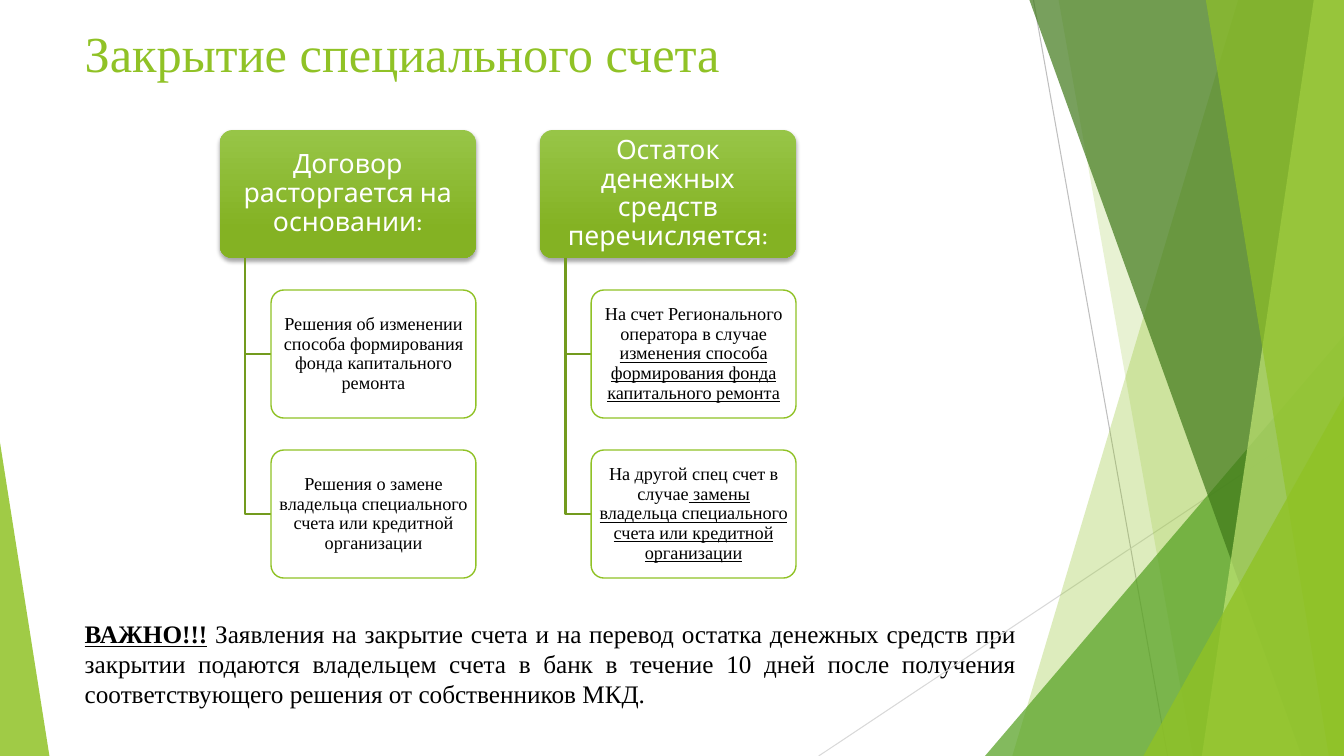
from lxml import etree
from pptx import Presentation
from pptx.dml.color import RGBColor
from pptx.enum.shapes import MSO_CONNECTOR, MSO_SHAPE
from pptx.enum.text import MSO_ANCHOR, MSO_AUTO_SIZE, PP_ALIGN
from pptx.oxml.ns import qn
from pptx.util import Inches, Pt

TITLE = "Закрытие специального счета"
BRANCHES = [
    ("Договор расторгается на основании:", [
        ("Решения об изменении способа формирования фонда капитального ремонта", ""),
        ("Решения о замене владельца специального счета или кредитной организации", ""),
    ]),
    ("Остаток денежных средств перечисляется:", [
        ("На счет Регионального оператора в случае ",
         "изменения способа формирования фонда капитального ремонта"),
        ("На другой спец счет в случае",
         " замены владельца специального счета или кредитной организации"),
    ]),
]
WARNING = "ВАЖНО!!!"
NOTE = (" Заявления на закрытие счета и на перевод остатка денежных средств при закрытии "
        "подаются владельцем счета в банк в течение 10 дней после получения "
        "соответствующего решения от собственников МКД.")

COLORS = {
    "green": "90C226", "leaf": "54A021", "dark": "3F7819", "pale": "C0E474",
    "stem": "739B1E", "top": "97C547", "bottom": "84B223",
    "white": "FFFFFF", "black": "000000", "gray": "BFBFBF", "light": "D9D9D9",
}
SERIF, SANS = "Times New Roman", "Karla"
WIDTH, HEIGHT = 13.33, 7.5

RAYS = [("gray", (10.25, 0), (11.58, HEIGHT)), ("light", (WIDTH, 4.03), (8.12, HEIGHT))]
FACETS = [
    ("band", 12.28, 10.04, "green", 30),
    ("band", 10.5, 11.83, "green", 20),
    ("triangle", 9.77, 3.33, "leaf", 72),
    ("band", 10.21, 12.91, "dark", 70),
    ("band", 13.03, 11.92, "pale", 70),
    ("band", 11.96, 13.18, "green", 65),
    ("triangle", 11.34, 3.93, "green", 80),
]

LEFT, TOP = 2.18, 1.29
HEAD_W, BOX_H = 2.54, 1.27
COLUMN_STEP, ROW_STEP = HEAD_W * 1.25, BOX_H * 1.25
STEM_X, LEAF_X = HEAD_W * 0.1, HEAD_W * 0.2
LEAF_W = HEAD_W - LEAF_X


def rgb(name):
    return RGBColor.from_string(COLORS[name])


def paint(shape, color, opacity):
    shape.shadow.inherit = False
    shape.line.fill.background()
    shape.fill.solid()
    shape.fill.fore_color.rgb = rgb(color)
    tint = shape.fill._xPr.find(qn("a:solidFill"))[0]
    etree.SubElement(tint, qn("a:alpha"), val=str(opacity * 1000))


def outline(points, close):
    corners = [(Inches(x), Inches(y)) for x, y in points]
    builder = slide.shapes.build_freeform(*corners[0])
    builder.add_line_segments(corners[1:], close=close)
    shape = builder.convert_to_shape()
    shape.shadow.inherit = False
    return shape


def add_triangle(x, y, width, apex, color, opacity):
    triangle = slide.shapes.add_shape(
        MSO_SHAPE.ISOSCELES_TRIANGLE, Inches(x), Inches(y), Inches(width), Inches(HEIGHT - y))
    triangle.adjustments[0] = apex
    paint(triangle, color, opacity)


def add_box(x, y, width, pieces, font, size, color, margin):
    box = slide.shapes.add_shape(
        MSO_SHAPE.ROUNDED_RECTANGLE, Inches(x), Inches(y), Inches(width), Inches(BOX_H))
    box.adjustments[0] = 0.1
    box.shadow.inherit = False
    frame = box.text_frame
    frame.word_wrap = True
    frame.vertical_anchor = MSO_ANCHOR.MIDDLE
    frame.margin_left = frame.margin_right = Inches(margin)
    frame.margin_top = frame.margin_bottom = Inches(margin - 0.01)
    paragraph = frame.paragraphs[0]
    paragraph.alignment = PP_ALIGN.CENTER
    paragraph.line_spacing = 0.9
    style(paragraph, font, size, color)
    for piece, underlined in pieces:
        if piece:
            run = paragraph.add_run()
            run.text = piece
            if underlined:
                run.font.underline = True
    return box


def style(paragraph, font, size, color):
    paragraph.font.name = font
    paragraph.font.size = Pt(size)
    paragraph.font.color.rgb = rgb(color)


def add_head(x, text):
    head = add_box(x, TOP, HEAD_W, [(text, False)], SANS, 19, "white", 0.04)
    head.line.fill.background()
    head.fill.gradient()
    head.fill.gradient_angle = 270
    for stop, position, color in zip(head.fill.gradient_stops, (0, 0.78), ("top", "bottom")):
        stop.position = position
        stop.color.rgb = rgb(color)
    effects = head._element.spPr.find(qn("a:effectLst"))
    shade = etree.SubElement(effects, qn("a:outerShdw"), blurRad=str(Pt(3)),
                             dist=str(Pt(2)), dir="5400000", rotWithShape="0")
    tint = etree.SubElement(shade, qn("a:srgbClr"), val=COLORS["black"])
    etree.SubElement(tint, qn("a:alpha"), val="35000")


def add_leaf(x, row, plain, underlined):
    y = TOP + row * ROW_STEP
    middle = y + BOX_H / 2
    stem = outline([(x + STEM_X, TOP + BOX_H), (x + STEM_X, middle), (x + LEAF_X, middle)], False)
    stem.fill.background()
    stem.line.color.rgb = rgb("stem")
    stem.line.width = Pt(1.5)
    leaf = add_box(x + LEAF_X, y, LEAF_W, [(plain, False), (underlined, True)],
                   SERIF, 13, "black", 0.03)
    paint(leaf, "white", 90)
    leaf.line.color.rgb = rgb("green")
    leaf.line.width = Pt(1)


def place(holder, x, y, width, height):
    holder.left, holder.top = Inches(x), Inches(y)
    holder.width, holder.height = Inches(width), Inches(height)
    holder.text_frame.word_wrap = True
    holder.text_frame.auto_size = MSO_AUTO_SIZE.NONE
    holder.text_frame.vertical_anchor = MSO_ANCHOR.TOP
    return holder.text_frame.paragraphs[0]


deck = Presentation()
deck.slide_width, deck.slide_height = Inches(WIDTH), Inches(HEIGHT)
slide = deck.slides.add_slide(deck.slide_layouts[1])

for color, start, end in RAYS:
    ray = slide.shapes.add_connector(
        MSO_CONNECTOR.STRAIGHT, *[Inches(value) for value in start + end])
    ray.line.color.rgb = rgb(color)
    ray.line.width = Pt(0.75)
    etree.SubElement(ray._element.spPr, qn("a:effectLst"))

for kind, first, second, color, opacity in FACETS:
    if kind == "band":
        band = outline([(first, 0), (WIDTH, 0), (WIDTH, HEIGHT), (second, HEIGHT)], True)
        paint(band, color, opacity)
    else:
        add_triangle(first, second, WIDTH - first, 1, color, opacity)
add_triangle(0, 4.39, 0.49, 0, "green", 85)

heading = place(slide.shapes.title, 0.74, 0.17, 9.4, 1.44)
heading.text = TITLE
heading.alignment = PP_ALIGN.LEFT
style(heading, SERIF, 36, "green")

note = place(slide.placeholders[1], 0.74, 6.09, 9.44, 1.03)
note.alignment = PP_ALIGN.JUSTIFY
note.space_before = Pt(0)
note.line_spacing = Pt(21.4)
style(note, SERIF, 18, "black")
note_format = note._p.get_or_add_pPr()
note_format.set("marL", "0")
note_format.set("indent", "0")
note_format.insert_element_before(
    etree.SubElement(note_format, qn("a:buNone")), "a:tabLst", "a:defRPr", "a:extLst")
warning = note.add_run()
warning.text = WARNING
warning.font.bold = warning.font.underline = True
note.add_run().text = NOTE

for column, (head_text, leaves) in enumerate(BRANCHES):
    branch_x = LEFT + column * COLUMN_STEP
    add_head(branch_x, head_text)
    for row, (plain, underlined) in enumerate(leaves, 1):
        add_leaf(branch_x, row, plain, underlined)

deck.save("out.pptx")
